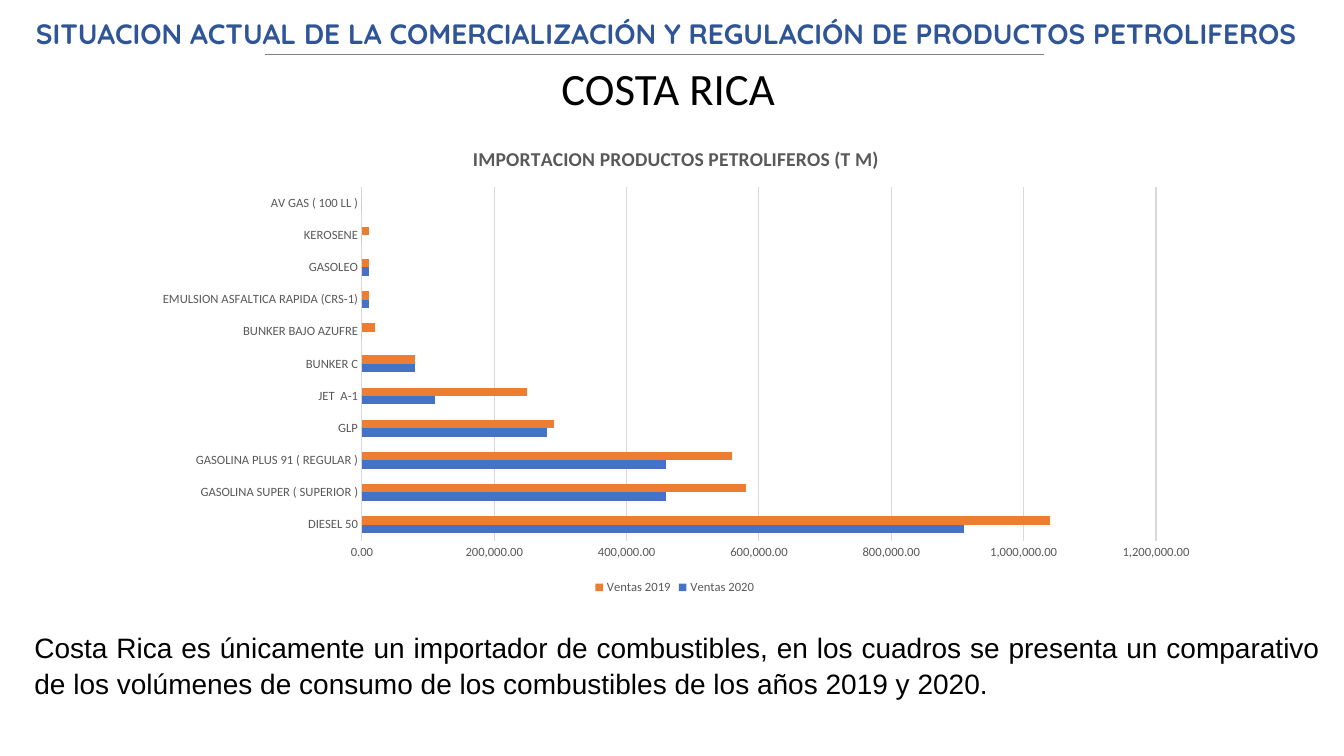
from lxml import etree
from pptx import Presentation
from pptx.chart.data import CategoryChartData
from pptx.dml.color import RGBColor
from pptx.enum.chart import XL_CHART_TYPE, XL_LEGEND_POSITION, XL_TICK_MARK
from pptx.enum.shapes import MSO_CONNECTOR
from pptx.enum.text import MSO_ANCHOR, MSO_AUTO_SIZE, PP_ALIGN
from pptx.oxml.ns import qn
from pptx.util import Pt

# Content
HEADING = "SITUACION ACTUAL DE LA COMERCIALIZACIÓN Y REGULACIÓN DE PRODUCTOS PETROLIFEROS"
COUNTRY = "COSTA RICA"
NOTE = ("Costa Rica es únicamente un importador de combustibles, en los cuadros se presenta "
        "un comparativo de los volúmenes de consumo de los combustibles de los años 2019 y 2020.")
CHART_TITLE = "IMPORTACION PRODUCTOS PETROLIFEROS (T M)"
SALES = [  # product, 2020, 2019
    ("DIESEL 50", 910000, 1040000),
    ("GASOLINA SUPER ( SUPERIOR )", 460000, 580000),
    ("GASOLINA PLUS 91 ( REGULAR )", 460000, 560000),
    ("GLP", 280000, 290000),
    ("JET  A-1", 110000, 250000),
    ("BUNKER C", 80000, 80000),
    ("BUNKER BAJO AZUFRE", 0, 20000),
    ("EMULSION ASFALTICA RAPIDA (CRS-1)", 10000, 10000),
    ("GASOLEO", 10000, 10000),
    ("KEROSENE", 0, 10000),
    ("AV GAS ( 100 LL )", 0, 0),
]

BLACK = RGBColor(0, 0, 0)
NAVY = RGBColor(0x2F, 0x55, 0x97)
RULE_GRAY = RGBColor(0x80, 0x80, 0x80)
TEXT_GRAY = RGBColor(0x59, 0x59, 0x59)
GRID_GRAY = RGBColor(0xD9, 0xD9, 0xD9)
BLUE = RGBColor(0x44, 0x72, 0xC4)
ORANGE = RGBColor(0xED, 0x7D, 0x31)


def style(font, name, size, color, bold=False):
    font.name, font.size, font.bold = name, Pt(size), bold
    font.color.rgb = color


def place(sp, left, top, width, height):
    sp.left, sp.top, sp.width, sp.height = Pt(left), Pt(top), Pt(width), Pt(height)


def write(sp, text, *font):
    tf = sp.text_frame
    tf.word_wrap = True
    tf.text = text
    p = tf.paragraphs[0]
    style(p.runs[0].font, *font)
    return p


prs = Presentation()
prs.slide_width, prs.slide_height = Pt(960), Pt(540)
slide = prs.slides.add_slide(prs.slide_layouts[5])
shapes = slide.shapes

# Heading
title = shapes.title
place(title, 0, -23, 952, 97)
p = write(title, HEADING, "Quicksand", 20, NAVY, True)
p.alignment, p.line_spacing = PP_ALIGN.CENTER, 0.9
title.text_frame.vertical_anchor = MSO_ANCHOR.MIDDLE
title.text_frame.auto_size = MSO_AUTO_SIZE.NONE

# Rule below the heading
rule = shapes.add_connector(MSO_CONNECTOR.STRAIGHT, Pt(189.5), Pt(39), Pt(746), Pt(39))
rule.line.color.rgb, rule.line.width = RULE_GRAY, Pt(1)
etree.SubElement(rule._element.spPr, qn("a:effectLst"))

# Country and note
country = shapes.add_textbox(Pt(394), Pt(39.5), Pt(171), Pt(46))
write(country, COUNTRY, "Calibri", 32, BLACK)
note = shapes.add_textbox(Pt(17.5), Pt(445), Pt(933), Pt(57.5))
p = write(note, NOTE, "Arial", 20, BLACK)
p.alignment, p.line_spacing, p.space_after = PP_ALIGN.JUSTIFY, 1.07, Pt(8)

# Chart
products, sales_2020, sales_2019 = zip(*SALES)
data = CategoryChartData(number_format="#,##0.00")
data.categories = products
data.add_series("Ventas 2020 ", sales_2020)
data.add_series("Ventas 2019", sales_2019)
chart = shapes.add_chart(XL_CHART_TYPE.BAR_CLUSTERED, Pt(101), Pt(90.75),
                         Pt(764), Pt(337), data).chart
style(chart.font, "Calibri", 10, BLACK)

chart.has_title = True
chart_tf = chart.chart_title.text_frame
chart_tf.text = CHART_TITLE
style(chart_tf.paragraphs[0].runs[0].font, "Calibri", 14, TEXT_GRAY, True)
chart.chart_title.include_in_layout = False

chart.has_legend = True
legend = chart.legend
legend.position, legend.include_in_layout = XL_LEGEND_POSITION.BOTTOM, False
style(legend.font, "Calibri", 9, TEXT_GRAY)

# Series
plot = chart.plots[0]
plot.gap_width, plot.overlap, plot.vary_by_categories = 182, 0, False
for series, color in zip(plot.series, (BLUE, ORANGE)):
    series.format.fill.solid()
    series.format.fill.fore_color.rgb = color

# Axes and gridlines
cat_axis, val_axis = chart.category_axis, chart.value_axis
for axis in (cat_axis, val_axis):
    axis.major_tick_mark = axis.minor_tick_mark = XL_TICK_MARK.NONE
    style(axis.tick_labels.font, "Calibri", 9, TEXT_GRAY)
val_axis.has_major_gridlines = True
for line in (cat_axis.format.line, val_axis.major_gridlines.format.line):
    line.color.rgb, line.width = GRID_GRAY, Pt(0.75)
val_axis.format.line.fill.background()
val_axis.minimum_scale, val_axis.maximum_scale, val_axis.major_unit = 0, 1200000, 200000
val_axis.tick_labels.number_format = "#,##0.00"
val_axis.tick_labels.number_format_is_linked = False

prs.save("out.pptx")
